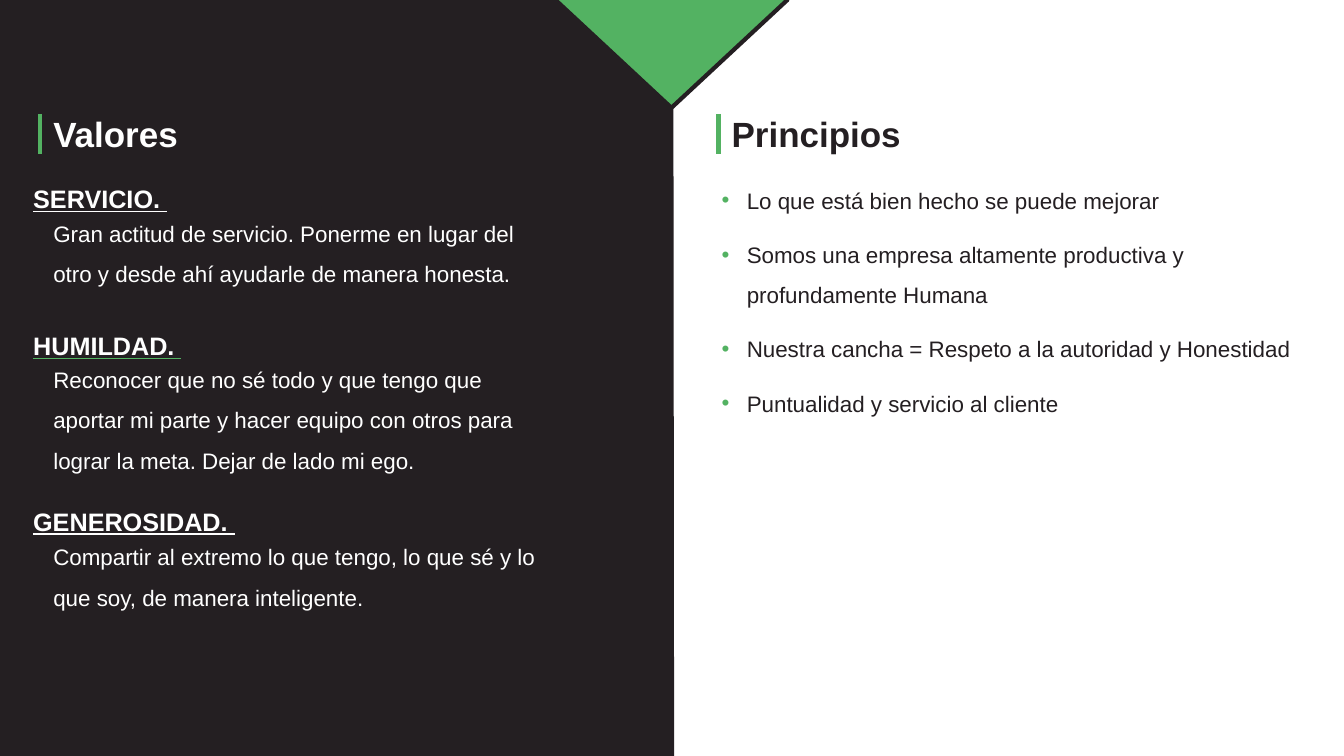
import pptx
import pptx.util
import pptx.dml.color
import pptx.enum.shapes
import pptx.oxml
import pptx.oxml.ns
from lxml import etree

DARK, GREEN, WHITE = "241F22", "53B262", "FFFFFF"
KIND = pptx.enum.shapes.MSO_SHAPE
qn = pptx.oxml.ns.qn


def color(code):
    return pptx.dml.color.RGBColor.from_string(code)


def tint(parent, code):
    """Append a solid colour to an XML element."""
    etree.SubElement(parent, qn("a:srgbClr")).set("val", code)


def write(para, text, size=16, ink=WHITE, bold=False, under=False, rule=None):
    """Add a formatted run; rule is the colour of its underline."""
    run = para.add_run()
    run.text = text
    font = run.font
    font.name, font.size = "Arial", pptx.util.Pt(size)
    font.bold, font.underline = bold, under
    font.color.rgb = color(ink)
    if rule:
        fill = etree.Element(qn("a:uFill"))
        tint(etree.SubElement(fill, qn("a:solidFill")), rule)
        run._r.rPr.find(qn("a:latin")).addprevious(fill)


def bullet(para):
    props = para._p.get_or_add_pPr()
    indent = pptx.util.Inches(0.25)
    props.set("marL", str(indent))
    props.set("indent", str(-indent))
    tint(etree.SubElement(props, qn("a:buClr")), GREEN)
    etree.SubElement(props, qn("a:buFont")).set("typeface", "Arial")
    etree.SubElement(props, qn("a:buChar")).set("char", "•")


class Page:
    """One slide; all lengths are percentages of its width and height."""

    def __init__(self, deck):
        self.deck = deck
        self.slide = deck.slides.add_slide(deck.slide_layouts[6])
        self.shapes = self.slide.shapes
        self.slide.background.fill.solid()
        self.slide.background.fill.fore_color.rgb = color(WHITE)

    def scale(self, *spans):
        """Turn x, y pairs of percentages into lengths."""
        sides = (self.deck.slide_width, self.deck.slide_height)
        return [round(span * sides[i % 2] / 100) for i, span in enumerate(spans)]

    def shape(self, kind, area, fill, edge=None):
        item = self.shapes.add_shape(kind, *self.scale(*area))
        item.shadow.inherit = False
        item.fill.solid()
        item.fill.fore_color.rgb = color(fill)
        if edge:
            item.line.color.rgb = color(edge)
            item.line.width = pptx.util.Pt(3)
        else:
            item.line.fill.background()

    def line(self, ends, ink):
        item = self.shapes.add_connector(
            pptx.enum.shapes.MSO_CONNECTOR.STRAIGHT, *self.scale(*ends))
        item.line.color.rgb = color(ink)
        item.line.width = pptx.util.Pt(3)
        etree.SubElement(item._element.spPr, qn("a:effectLst"))

    def text(self, area, *lines, space=1.5, dots=False, **style):
        frame = self.shapes.add_textbox(*self.scale(*area)).text_frame
        frame.word_wrap = True
        for i, words in enumerate(lines):
            para = frame.add_paragraph() if i else frame.paragraphs[0]
            para.line_spacing = space
            if i:
                para.space_before = pptx.util.Pt(10)
            if dots:
                bullet(para)
            write(para, words, **style)

    def title(self, left, words, ink):
        """Place a heading with a green bar at its left."""
        self.text((left, 14.27, 17.5, 6.93), words,
                  space=1.0, size=25, ink=ink, bold=True)
        bar = left - 0.23
        self.line((bar, 15.07, bar, 20.4), GREEN)


def main():
    deck = pptx.Presentation()
    deck.slide_width = pptx.util.Inches(13.33)
    deck.slide_height = pptx.util.Inches(7.5)
    page = Page(deck)

    page.shape(KIND.RECTANGLE, (0, 0, 50, 100), DARK)
    page.line((49.95, 14.27, 50, 100), DARK)
    page.shape(KIND.DIAMOND, (41.33, -14.27, 17.25, 28.53), GREEN, DARK)

    page.title(3.23, "Valores", WHITE)
    values = [
        (21.6, 26.67, 14.67, "SERVICIO. ", None,
         "Gran actitud de servicio. Ponerme en lugar del otro "
         "y desde ahí ayudarle de manera honesta."),
        (41.07, 46, 18.4, "HUMILDAD. ", GREEN,
         "Reconocer que no sé todo y que tengo que aportar mi parte "
         "y hacer equipo con otros para lograr la meta. Dejar de lado mi ego."),
        (64.27, 69.47, 13.2, "GENEROSIDAD. ", None,
         "Compartir al extremo lo que tengo, lo que sé y lo que soy, "
         "de manera inteligente."),
    ]
    for head, top, height, name, rule, detail in values:
        page.text((1.73, head, 40.95, 5.2), name,
                  size=18, bold=True, under=True, rule=rule)
        page.text((3.23, top, 38.55, height), detail)

    page.title(53.7, "Principios", DARK)
    page.text((52.95, 22.27, 45.83, 18.93),
              "Lo que está bien hecho se puede mejorar",
              "Somos una empresa altamente productiva y profundamente Humana",
              "Nuestra cancha = Respeto a la autoridad y Honestidad",
              "Puntualidad y servicio al cliente",
              dots=True, ink=DARK)

    deck.save("out.pptx")


if __name__ == "__main__":
    main()
